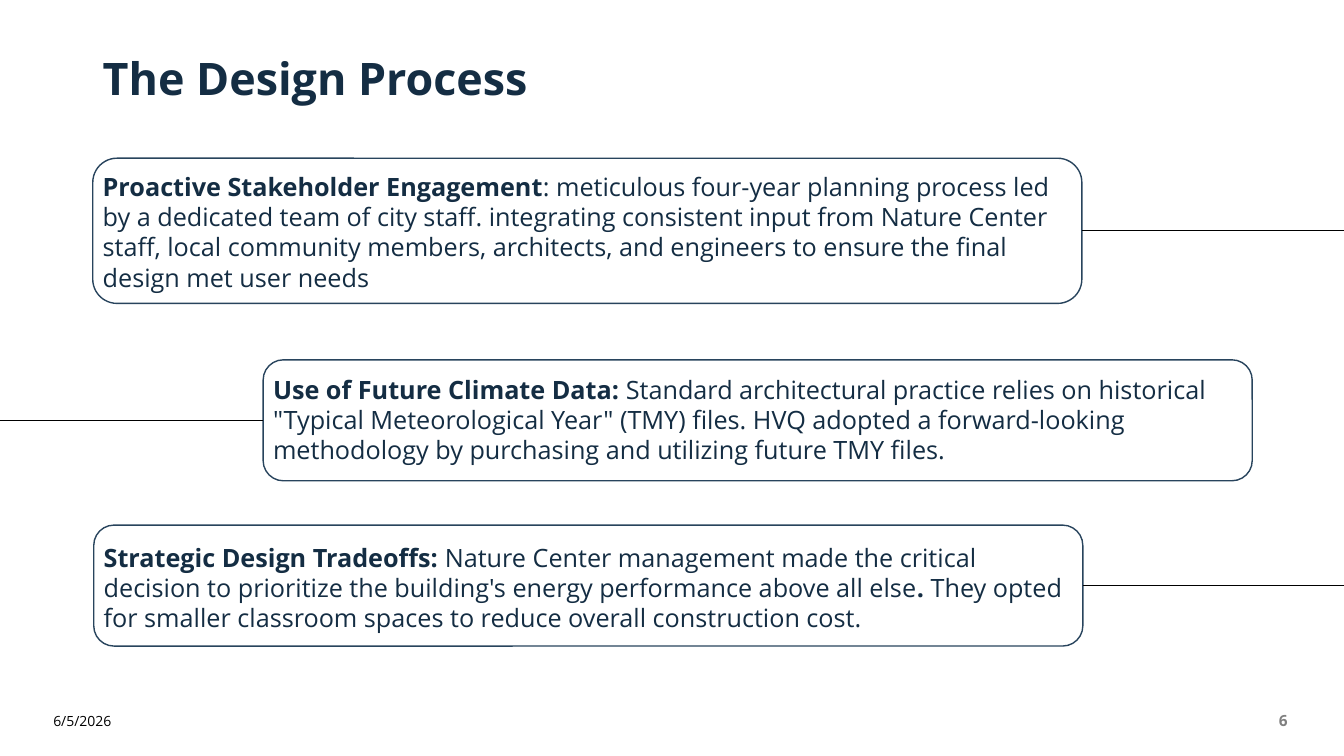
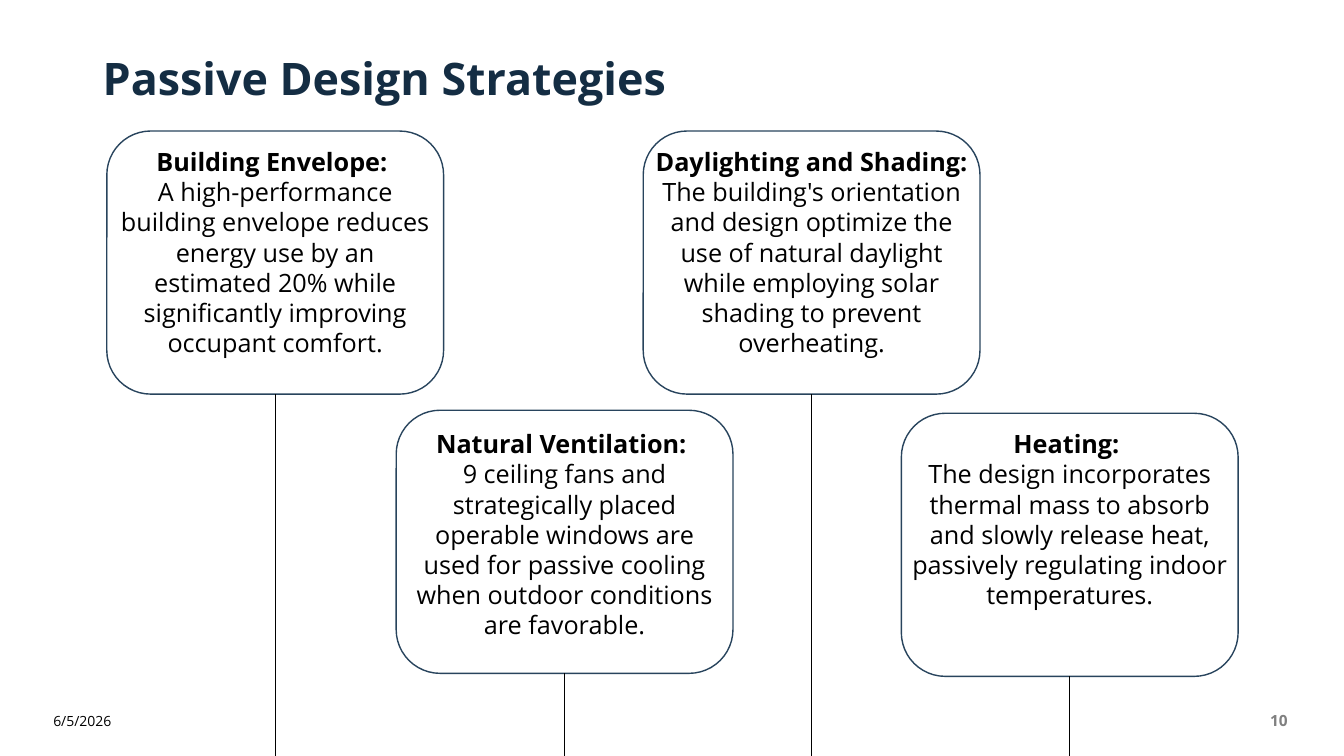
from dataclasses import dataclass

from pptx import Presentation
from pptx.dml.color import RGBColor
from pptx.enum.shapes import MSO_CONNECTOR, MSO_SHAPE
from pptx.enum.text import MSO_ANCHOR, PP_ALIGN
from pptx.oxml.ns import qn
from pptx.shapes.autoshape import Shape
from pptx.slide import Slide
from pptx.util import Inches, Pt
from lxml.etree import SubElement


@dataclass(frozen=True)
class Theme:
    font: str = "Open Sans"
    navy: RGBColor = RGBColor(0x14, 0x2D, 0x43)
    edge: RGBColor = RGBColor(0x28, 0x44, 0x5D)
    black: RGBColor = RGBColor(0, 0, 0)
    gray: RGBColor = RGBColor(0x80, 0x80, 0x80)
    title: int = 32
    body: int = 18
    date: int = 10
    page: int = 11
    border: float = 1
    rule: float = 0.5


@dataclass(frozen=True)
class Box:
    left: float
    top: float
    width: float
    height: float


@dataclass(frozen=True)
class Run:
    text: str
    bold: bool = False


@dataclass(frozen=True)
class Card:
    box: Box
    text_top: float
    paras: list[list[Run]]
    side: int  # connection site: 1 left, 2 bottom, 3 right


THEME = Theme()
WIDTH, HEIGHT = 13.33, 7.5
DATE = "6/5/2026"


def add_text(slide: Slide, box: Box, paras: list[list[Run]], size: int,
             color: RGBColor, align: PP_ALIGN = PP_ALIGN.LEFT,
             anchor: MSO_ANCHOR = MSO_ANCHOR.MIDDLE, spacing: float = 1.0) -> None:
    shape = slide.shapes.add_textbox(Inches(box.left), Inches(box.top),
                                     Inches(box.width), Inches(box.height))
    frame = shape.text_frame
    frame.word_wrap = True
    frame.vertical_anchor = anchor
    for index, runs in enumerate(paras):
        para = frame.add_paragraph() if index else frame.paragraphs[0]
        para.alignment = align
        para.line_spacing = spacing
        font = para.font
        font.name, font.size, font.color.rgb = THEME.font, Pt(size), color
        same = len({run.bold for run in runs}) == 1
        if same:
            font.bold = runs[0].bold
        for item in runs:
            run = para.add_run()
            run.text = item.text
            if not same:
                run.font.bold = item.bold


def add_line(slide: Slide, card: Shape, side: int) -> None:
    """Join the middle of a card's side to the slide edge it faces."""
    mid_x = card.left + card.width // 2
    mid_y = card.top + card.height // 2
    end = {1: (0, mid_y), 2: (mid_x, Inches(HEIGHT)), 3: (Inches(WIDTH), mid_y)}[side]
    line = slide.shapes.add_connector(MSO_CONNECTOR.STRAIGHT, *end, *end)
    line.begin_connect(card, side)
    line.line.color.rgb = THEME.black
    line.line.width = Pt(THEME.rule)
    SubElement(line._element.spPr, qn("a:effectLst"))


def add_card(slide: Slide, card: Card, color: RGBColor, align: PP_ALIGN) -> None:
    box = card.box
    shape = slide.shapes.add_shape(
        MSO_SHAPE.ROUNDED_RECTANGLE, Inches(box.left), Inches(box.top),
        Inches(box.width), Inches(box.height))
    shape.shadow.inherit = False
    shape.fill.background()
    shape.line.color.rgb = THEME.edge
    shape.line.width = Pt(THEME.border)
    add_line(slide, shape, card.side)
    area = Box(box.left, card.text_top, box.width, box.top + box.height - card.text_top)
    add_text(slide, area, card.paras, THEME.body, color, align, MSO_ANCHOR.TOP)


def add_page(deck: Presentation, title: str, number: int, cards: list[Card],
             color: RGBColor, align: PP_ALIGN) -> None:
    slide = deck.slides.add_slide(deck.slide_layouts[6])
    add_text(slide, Box(0.92, 0.4, 11.5, 0.8), [[Run(title, True)]],
             THEME.title, THEME.navy, spacing=0.9)
    add_text(slide, Box(0.43, 6.95, 1.02, 0.4), [[Run(DATE)]], THEME.date, THEME.black)
    add_text(slide, Box(12.12, 6.95, 0.75, 0.4), [[Run(str(number), True)]],
             THEME.page, THEME.gray, PP_ALIGN.RIGHT)
    for card in cards:
        add_card(slide, card, color, align)


def wide(left: float, top: float, height: float, text_top: float, side: int,
         *runs: Run) -> Card:
    return Card(Box(left, top, 9.81, height), text_top, [list(runs)], side)


def tall(left: float, top: float, text_top: float, head: str, body: str) -> Card:
    return Card(Box(left, top, 3.34, 2.61), text_top,
                [[Run(head, True)], [Run(body)]], 2)


STEPS = [
    wide(0.92, 1.57, 1.44, 1.65, 3,
         Run("Proactive Stakeholder Engagement", True),
         Run(": meticulous four-year planning process led by a dedicated team of city "
             "staff. integrating consistent input from Nature Center staff, local "
             "community members, architects, and engineers to ensure the final design "
             "met user needs")),
    wide(2.61, 3.57, 1.2, 3.66, 1,
         Run("Use of Future Climate Data:", True),
         Run(" Standard architectural practice relies on historical \"Typical "
             "Meteorological Year\" (TMY) files. HVQ adopted a forward-looking "
             "methodology by purchasing and utilizing future TMY files.")),
    wide(0.93, 5.21, 1.2, 5.33, 3,
         Run("Strategic Design Tradeoffs: ", True),
         Run("Nature Center management made the critical decision to prioritize the "
             "building's energy performance above all else"),
         Run(". ", True),
         Run("They opted for smaller classroom spaces to reduce overall construction "
             "cost.")),
]

TACTICS = [
    tall(1.06, 1.3, 1.4, "Building Envelope: ",
         "A high-performance building envelope reduces energy use by an estimated 20% "
         "while significantly improving occupant comfort."),
    tall(3.93, 4.07, 4.2, "Natural Ventilation: ",
         "9 ceiling fans and strategically placed operable windows are used for passive "
         "cooling when outdoor conditions are favorable."),
    tall(6.38, 1.3, 1.4, "Daylighting and Shading: ",
         "The building's orientation and design optimize the use of natural daylight "
         "while employing solar shading to prevent overheating."),
    tall(8.94, 4.1, 4.2, "Heating: ",
         "The design incorporates thermal mass to absorb and slowly release heat, "
         "passively regulating indoor temperatures."),
]


def main() -> None:
    deck = Presentation()
    deck.slide_width, deck.slide_height = Inches(WIDTH), Inches(HEIGHT)
    add_page(deck, "The Design Process", 6, STEPS, THEME.navy, PP_ALIGN.LEFT)
    add_page(deck, "Passive Design Strategies", 10, TACTICS, THEME.black, PP_ALIGN.CENTER)
    deck.save("out.pptx")


if __name__ == "__main__":
    main()
